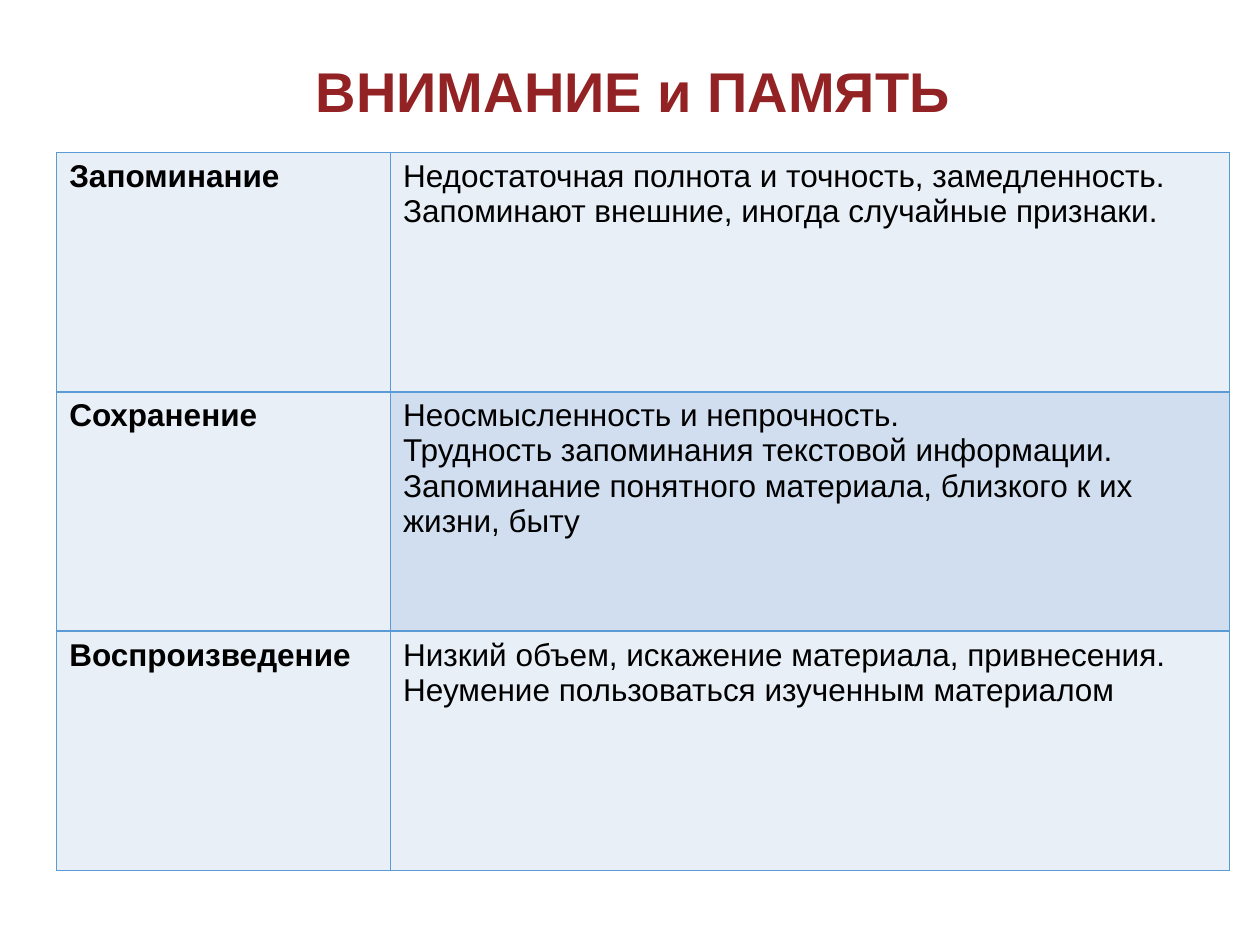
from lxml.etree import SubElement
from pptx import Presentation
from pptx.dml.color import RGBColor
from pptx.enum.text import MSO_ANCHOR, PP_ALIGN
from pptx.oxml.ns import qn
from pptx.util import Inches, Pt

TITLE = "ВНИМАНИЕ и ПАМЯТЬ"
MEMORY_STAGES = [
    ("Запоминание", [
        "Недостаточная полнота и точность, замедленность.",
        "Запоминают внешние, иногда случайные признаки.",
    ]),
    ("Сохранение", [
        "Неосмысленность и непрочность.",
        "Трудность запоминания текстовой информации.",
        "Запоминание понятного материала, близкого к их жизни, быту",
    ]),
    ("Воспроизведение", [
        "Низкий объем, искажение материала, привнесения.",
        "Неумение пользоваться изученным материалом",
    ]),
]
COLUMN_WIDTHS = (2.65, 6.66)
ROW_HEIGHT = 1.9
LIGHT, DARK = "E9EFF7", "D1DEEF"
BORDER = "5B9BD5"


def rgb(color):
    return RGBColor.from_string(color)


def style_para(para, size, color, bold):
    font = para.font
    font.name = "Arial"
    font.size = Pt(size)
    font.bold = bold
    font.color.rgb = rgb(color)


def add_title(page, text):
    box = page.shapes.add_textbox(Inches(2.27), Inches(0.3), Inches(5.51), Inches(0.83))
    frame = box.text_frame
    frame.word_wrap = True
    frame.vertical_anchor = MSO_ANCHOR.MIDDLE
    para = frame.paragraphs[0]
    para.text = text
    para.alignment = PP_ALIGN.CENTER
    style_para(para, 32, "922223", True)


def set_borders(cell, color, width):
    """Draw all four sides; lines must precede the fill in tcPr."""
    properties = cell._tc.get_or_add_tcPr()
    for index, side in enumerate(("lnL", "lnR", "lnT", "lnB")):
        line = SubElement(properties, qn(f"a:{side}"), w=str(Pt(width)))
        fill = SubElement(line, qn("a:solidFill"))
        SubElement(fill, qn("a:srgbClr"), val=color)
        properties.insert(index, line)


def fill_cell(cell, lines, fill, bold):
    cell.fill.solid()
    cell.fill.fore_color.rgb = rgb(fill)
    set_borders(cell, BORDER, 0.96)
    cell.text = "\n".join(lines)
    for para in cell.text_frame.paragraphs:
        style_para(para, 18, "000000", bold)


def add_stage_table(page, stages):
    table = page.shapes.add_table(
        len(stages), len(COLUMN_WIDTHS), Inches(0.45), Inches(1.21),
        Inches(sum(COLUMN_WIDTHS)), Inches(ROW_HEIGHT * len(stages)),
    ).table
    table.first_row = False
    table.horz_banding = False
    for column, width in zip(table.columns, COLUMN_WIDTHS):
        column.width = Inches(width)
    for index, (stage, features) in enumerate(stages):
        table.rows[index].height = Inches(ROW_HEIGHT)
        fill_cell(table.cell(index, 0), [stage], LIGHT, True)
        fill_cell(table.cell(index, 1), features, DARK if index % 2 else LIGHT, False)


def main():
    deck = Presentation()
    deck.slide_width = Inches(10)
    deck.slide_height = Inches(7.5)
    page = deck.slides.add_slide(deck.slide_layouts[6])
    add_title(page, TITLE)
    add_stage_table(page, MEMORY_STAGES)
    deck.save("out.pptx")


if __name__ == "__main__":
    main()
